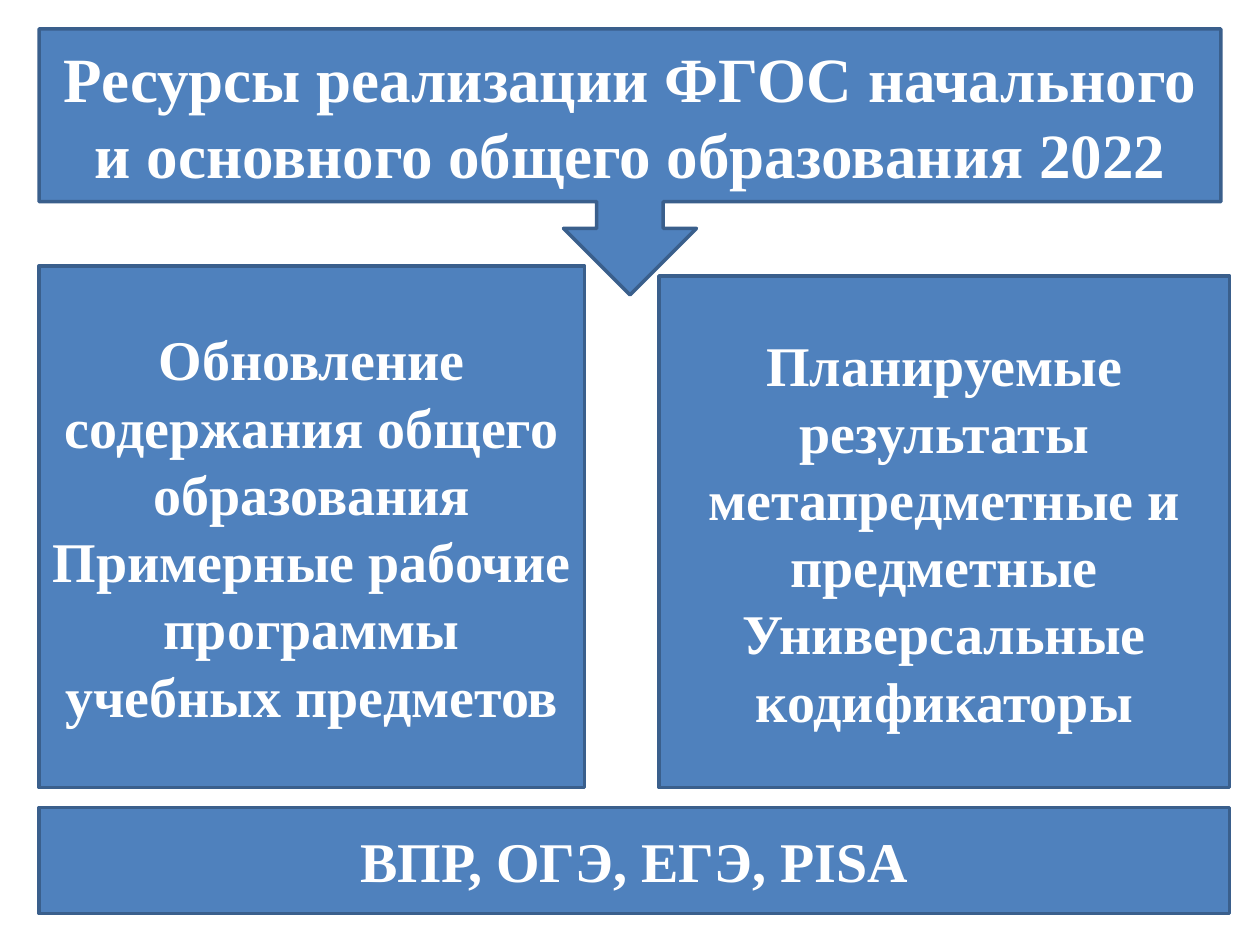
from dataclasses import dataclass

from pptx import Presentation
from pptx import util as u
from pptx.dml import color
from pptx.enum import shapes, text

COLORS = {"fill": "4F81BD", "border": "3A5F8C", "text": "FFFFFF"}
COLUMNS, ROWS = 100, 75  # grid laid over the slide
LEFT, RIGHT = 3.1, 97.6  # outer edges, in columns
PANEL_BOTTOM = 62.5  # shared lower edge of both panels, in rows


@dataclass
class Block:
    left: float
    top: float
    right: float
    bottom: float
    paragraphs: list[str]
    size: int = 32
    preset: shapes.MSO_SHAPE = shapes.MSO_SHAPE.RECTANGLE


BLOCKS = [
    # Two panels
    Block(LEFT, 21.1, 46.4, PANEL_BOTTOM,
          ["Обновление содержания общего образования",
           "Примерные рабочие программы учебных предметов"]),
    Block(52.3, 21.9, RIGHT, PANEL_BOTTOM,
          ["Планируемые результаты метапредметные и предметные",
           "Универсальные кодификаторы"]),
    # Heading with its arrow, in front of the panels
    Block(LEFT, 2.3, 96.9, 23.4,
          ["Ресурсы реализации ФГОС начального и основного общего образования 2022"],
          36, shapes.MSO_SHAPE.DOWN_ARROW_CALLOUT),
    # Assessments
    Block(LEFT, 64.1, RIGHT, 72.5, ["ВПР, ОГЭ, ЕГЭ, PISA"]),
]


def rgb(name: str) -> color.RGBColor:
    return color.RGBColor.from_string(COLORS[name])


def draw_block(slide, block: Block, column: float, row: float) -> None:
    shape = slide.shapes.add_shape(
        block.preset,
        round(block.left * column), round(block.top * row),
        round((block.right - block.left) * column),
        round((block.bottom - block.top) * row))
    shape.shadow.inherit = False
    shape.fill.solid()
    shape.fill.fore_color.rgb = rgb("fill")
    shape.line.color.rgb = rgb("border")
    shape.line.width = u.Pt(2)

    frame = shape.text_frame
    frame.word_wrap = True
    frame.vertical_anchor = text.MSO_ANCHOR.MIDDLE
    font_format = {"name": "Times New Roman", "size": u.Pt(block.size), "bold": True}
    for index, wording in enumerate(block.paragraphs):
        paragraph = frame.add_paragraph() if index else frame.paragraphs[0]
        paragraph.alignment = text.PP_ALIGN.CENTER
        run = paragraph.add_run()
        run.text = wording
        for attribute, value in font_format.items():
            setattr(run.font, attribute, value)
        run.font.color.rgb = rgb("text")


def main() -> None:
    deck = Presentation()
    deck.slide_width, deck.slide_height = u.Inches(10), u.Inches(7.5)
    slide = deck.slides.add_slide(deck.slide_layouts[6])
    for block in BLOCKS:
        draw_block(slide, block, deck.slide_width / COLUMNS, deck.slide_height / ROWS)
    deck.save("out.pptx")


if __name__ == "__main__":
    main()
